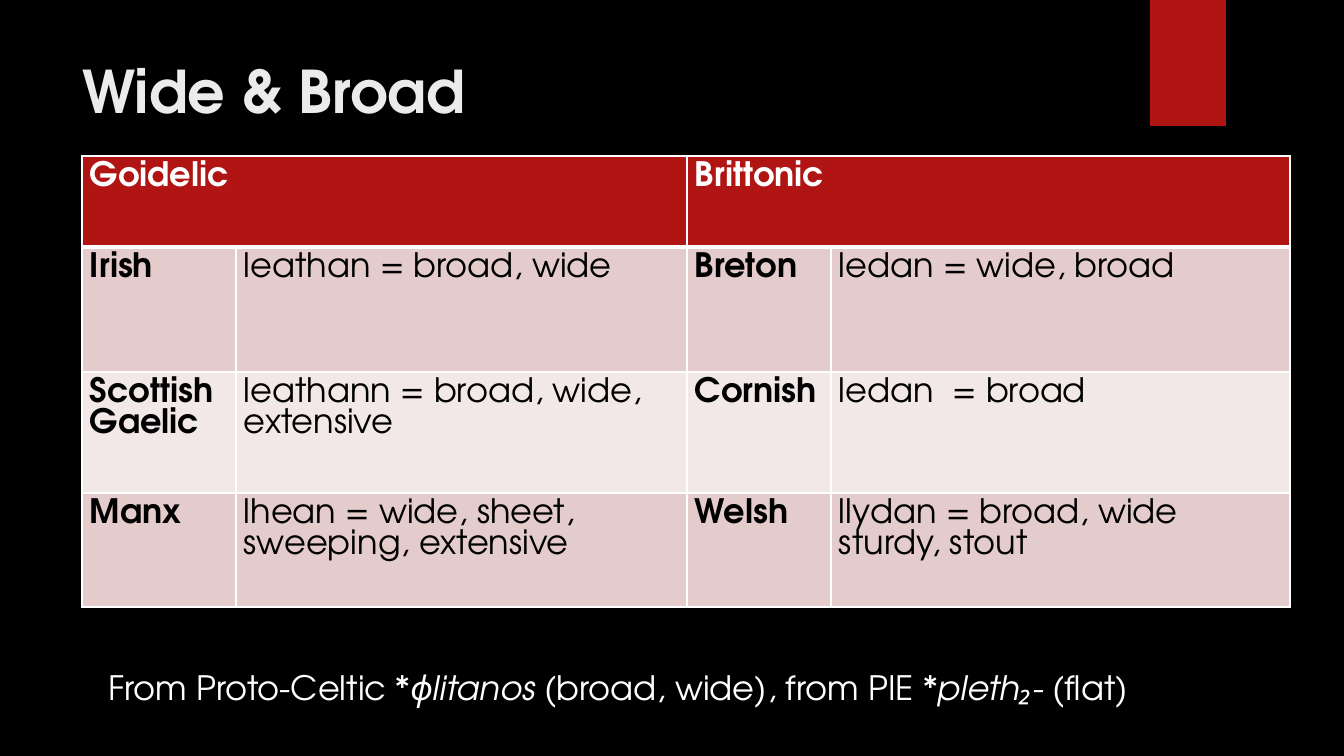
"""Build the Wide & Broad slide comparing Celtic cognates."""
import pptx
import pptx.util
import pptx.dml.color
import pptx.enum.shapes
import pptx.enum.text
import pptx.oxml
import pptx.oxml.ns

RGBColor = pptx.dml.color.RGBColor
BLACK = RGBColor(0x00, 0x00, 0x00)
WHITE = RGBColor(0xFF, 0xFF, 0xFF)
PALE_GREY = RGBColor(0xEB, 0xEB, 0xEB)
RED = RGBColor(0xB0, 0x15, 0x13)
ROSE = RGBColor(0xE4, 0xCC, 0xCC)
LIGHT_ROSE = RGBColor(0xF2, 0xE8, 0xE7)

FONT = "TeX Gyre Adventor"
TITLE = "Wide & Broad"
BRANCHES = ["Goidelic", "Brittonic"]
COGNATES = [
    ("Irish", "leathan = broad, wide", "Breton", "ledan = wide, broad"),
    ("Scottish Gaelic", "leathann = broad, wide, extensive", "Cornish", "ledan  = broad"),
    ("Manx", "lhean = wide, sheet, sweeping, extensive", "Welsh", "llydan = broad, wide sturdy, stout"),
]
ETYMOLOGY = [
    ("From Proto-Celtic ", False),
    ("*ɸlitanos ", True),
    ("(broad, wide), from PIE ", False),
    ("*pleth₂- ", True),
    ("(flat)", False),
]

SLIDE_SIZE = (1344, 756)
TAB_BOX = (1150, 0, 76, 126)
TITLE_BOX = (72, 50, 1037, 79)
TABLE_AT = (82, 156)
COLUMNS = [154, 451, 144, 459]
ROWS = [91, 125, 121, 114]
NOTE_BOX = (99, 662, 1078, 50)
CELL_MARGIN = 8
LINE_SPACING = pptx.util.Pt(22.5)
RULE, HEADER_RULE = 1, 3


def px(length):
    return pptx.util.Emu(round(length * 914400 / 100.8))


def add_span(para, text, color, size=24, bold=False, italic=False):
    span = para.add_run()
    span.text = text
    look = {"name": FONT, "size": pptx.util.Pt(size), "bold": bold, "italic": italic}
    for name, value in look.items():
        setattr(span.font, name, value)
    span.font.color.rgb = color


def add_borders(cell, widths):
    properties = cell._tc.get_or_add_tcPr()
    for index, (side, width) in enumerate(widths.items()):
        properties.insert(index, pptx.oxml.parse_xml(
            f'<a:ln{side} {pptx.oxml.ns.nsdecls("a")} w="{pptx.util.Pt(width)}">'
            f'<a:solidFill><a:srgbClr val="{WHITE}"/></a:solidFill></a:ln{side}>'))


def fill_cell(cell, row, text, bold):
    cell.fill.solid()
    cell.fill.fore_color.rgb = RED if row == 0 else ROSE if row % 2 else LIGHT_ROSE
    cell.margin_left = cell.margin_right = px(CELL_MARGIN)
    add_borders(cell, {"L": RULE, "R": RULE,
                       "T": HEADER_RULE if row == 1 else RULE,
                       "B": HEADER_RULE if row == 0 else RULE})
    para = cell.text_frame.paragraphs[0]
    para.line_spacing = LINE_SPACING
    if text:
        add_span(para, text, BLACK if row else WHITE, bold=bold)


def add_cognates(page):
    frame = page.shapes.add_table(len(ROWS), len(COLUMNS), *map(px, TABLE_AT),
                                  px(sum(COLUMNS)), px(sum(ROWS)))
    table = frame.table
    table.horz_banding = False
    for column, width in zip(table.columns, COLUMNS):
        column.width = px(width)
    for line, height in zip(table.rows, ROWS):
        line.height = px(height)
    header = [BRANCHES[0], "", BRANCHES[1], ""]
    for row, texts in enumerate([header, *COGNATES]):
        for column, text in enumerate(texts):
            fill_cell(table.cell(row, column), row, text, column % 2 == 0)
    for column in (0, 2):
        table.cell(0, column).merge(table.cell(0, column + 1))


def main():
    deck = pptx.Presentation()
    deck.slide_width, deck.slide_height = map(px, SLIDE_SIZE)
    page = deck.slides.add_slide(deck.slide_layouts[5])
    page.background.fill.solid()
    page.background.fill.fore_color.rgb = BLACK

    tab = page.shapes.add_shape(pptx.enum.shapes.MSO_SHAPE.RECTANGLE, *map(px, TAB_BOX))
    tab.shadow.inherit = False
    tab.fill.solid()
    tab.fill.fore_color.rgb = RED
    tab.line.fill.background()

    title = page.shapes.title
    title.left, title.top, title.width, title.height = map(px, TITLE_BOX)
    title.text_frame.vertical_anchor = pptx.enum.text.MSO_ANCHOR.MIDDLE
    para = title.text_frame.paragraphs[0]
    para.alignment = pptx.enum.text.PP_ALIGN.LEFT
    add_span(para, TITLE, PALE_GREY, size=42, bold=True)

    add_cognates(page)

    note = page.shapes.add_textbox(*map(px, NOTE_BOX))
    note.text_frame.word_wrap = True
    for text, italic in ETYMOLOGY:
        add_span(note.text_frame.paragraphs[0], text, WHITE, italic=italic)

    deck.save("out.pptx")


if __name__ == "__main__":
    main()
